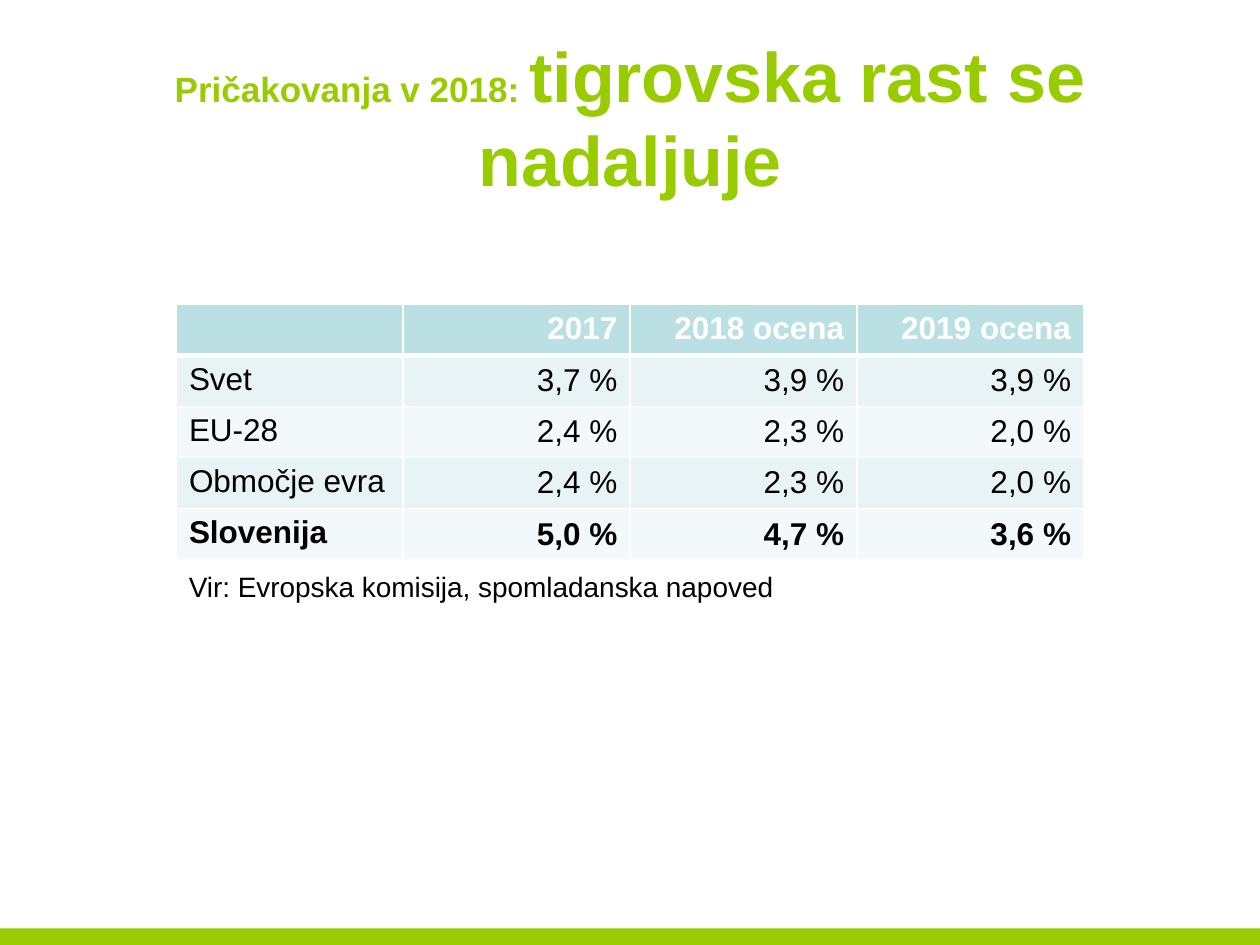
from lxml.etree import SubElement
from pptx import Presentation
from pptx.dml.color import RGBColor
from pptx.enum.shapes import MSO_SHAPE
from pptx.enum.text import MSO_ANCHOR, MSO_AUTO_SIZE, PP_ALIGN
from pptx.oxml.ns import qn
from pptx.util import Pt

GREEN = RGBColor(0x99, 0xCC, 0x00)
WHITE = RGBColor(0xFF, 0xFF, 0xFF)
BLACK = RGBColor(0x00, 0x00, 0x00)
HEADER_FILL = RGBColor(0xBB, 0xE0, 0xE3)
BAND_FILLS = (RGBColor(0xE7, 0xF3, 0xF4), RGBColor(0xF3, 0xF9, 0xFA))
FONT = "Arial"
LEFT, WIDTH = 100.8, 518.4
ROW_HEIGHT = 29.2
ROWS = (
    ("", "2017", "2018 ocena", "2019 ocena"),
    ("Svet", "3,7 %", "3,9 %", "3,9 %"),
    ("EU-28", "2,4 %", "2,3 %", "2,0 %"),
    ("Območje evra", "2,4 %", "2,3 %", "2,0 %"),
    ("Slovenija", "5,0 %", "4,7 %", "3,6 %"),
)


def add_text(para, text, size=18, color=BLACK, bold=False, align=PP_ALIGN.LEFT):
    """Append a formatted span of text to a paragraph."""
    para.alignment = align
    span = para.add_run()
    span.text = text
    span.font.name = FONT
    span.font.size = Pt(size)
    span.font.bold = bold
    span.font.color.rgb = color


def set_borders(cell, widths):
    """Draw white cell borders, given widths in points by side."""
    properties = cell._tc.get_or_add_tcPr()
    for side in "LRTB":
        line = SubElement(properties, qn(f"a:ln{side}"), w=str(Pt(widths[side])))
        fill = SubElement(line, qn("a:solidFill"))
        SubElement(fill, qn("a:srgbClr"), val=str(WHITE))


def add_title(page):
    """Place the two-size title in its placeholder."""
    title = page.shapes.title
    title.left, title.top, title.width, title.height = Pt(36), Pt(21.6), Pt(648), Pt(90)
    frame = title.text_frame
    frame.word_wrap = True
    frame.auto_size = MSO_AUTO_SIZE.NONE
    frame.vertical_anchor = MSO_ANCHOR.MIDDLE
    for text, size in (("Pričakovanja v 2018: ", 20), ("tigrovska rast se nadaljuje", 40)):
        add_text(frame.paragraphs[0], text, size=size, color=GREEN, bold=True,
                 align=PP_ALIGN.CENTER)


def add_footer_bar(page):
    """Draw the green bar along the bottom edge."""
    bar = page.shapes.add_shape(MSO_SHAPE.RECTANGLE, Pt(0), Pt(530.6), Pt(720), Pt(9.4))
    bar.shadow.inherit = False
    bar.fill.solid()
    bar.fill.fore_color.rgb = GREEN
    bar.line.fill.background()


def add_growth_table(page):
    """Add the table of growth forecasts."""
    table = page.shapes.add_table(len(ROWS), len(ROWS[0]), Pt(LEFT), Pt(173.8),
                                  Pt(WIDTH), Pt(ROW_HEIGHT * len(ROWS))).table
    for row_index, values in enumerate(ROWS):
        header = row_index == 0
        bold = row_index in (0, len(ROWS) - 1)
        for column_index, value in enumerate(values):
            cell = table.cell(row_index, column_index)
            set_borders(cell, {"L": 1, "R": 1, "T": 3 if row_index == 1 else 1,
                               "B": 3 if header else 1})
            cell.fill.solid()
            cell.fill.fore_color.rgb = HEADER_FILL if header else BAND_FILLS[(row_index - 1) % 2]
            if column_index and not header:
                cell.vertical_anchor = MSO_ANCHOR.MIDDLE
            if value:
                add_text(cell.text_frame.paragraphs[0], value, bold=bold,
                         color=WHITE if header else BLACK,
                         align=PP_ALIGN.RIGHT if column_index else PP_ALIGN.LEFT)


def add_source_note(page):
    """Add the data source below the table."""
    box = page.shapes.add_textbox(Pt(LEFT), Pt(322), Pt(WIDTH), Pt(26))
    box.text_frame.word_wrap = True
    add_text(box.text_frame.paragraphs[0], "Vir: Evropska komisija, spomladanska napoved", size=16)


def main():
    """Build and save the slide."""
    deck = Presentation()
    deck.slide_width, deck.slide_height = Pt(720), Pt(540)
    page = deck.slides.add_slide(deck.slide_layouts[5])
    add_footer_bar(page)
    add_title(page)
    add_growth_table(page)
    add_source_note(page)
    deck.save("out.pptx")


if __name__ == "__main__":
    main()
